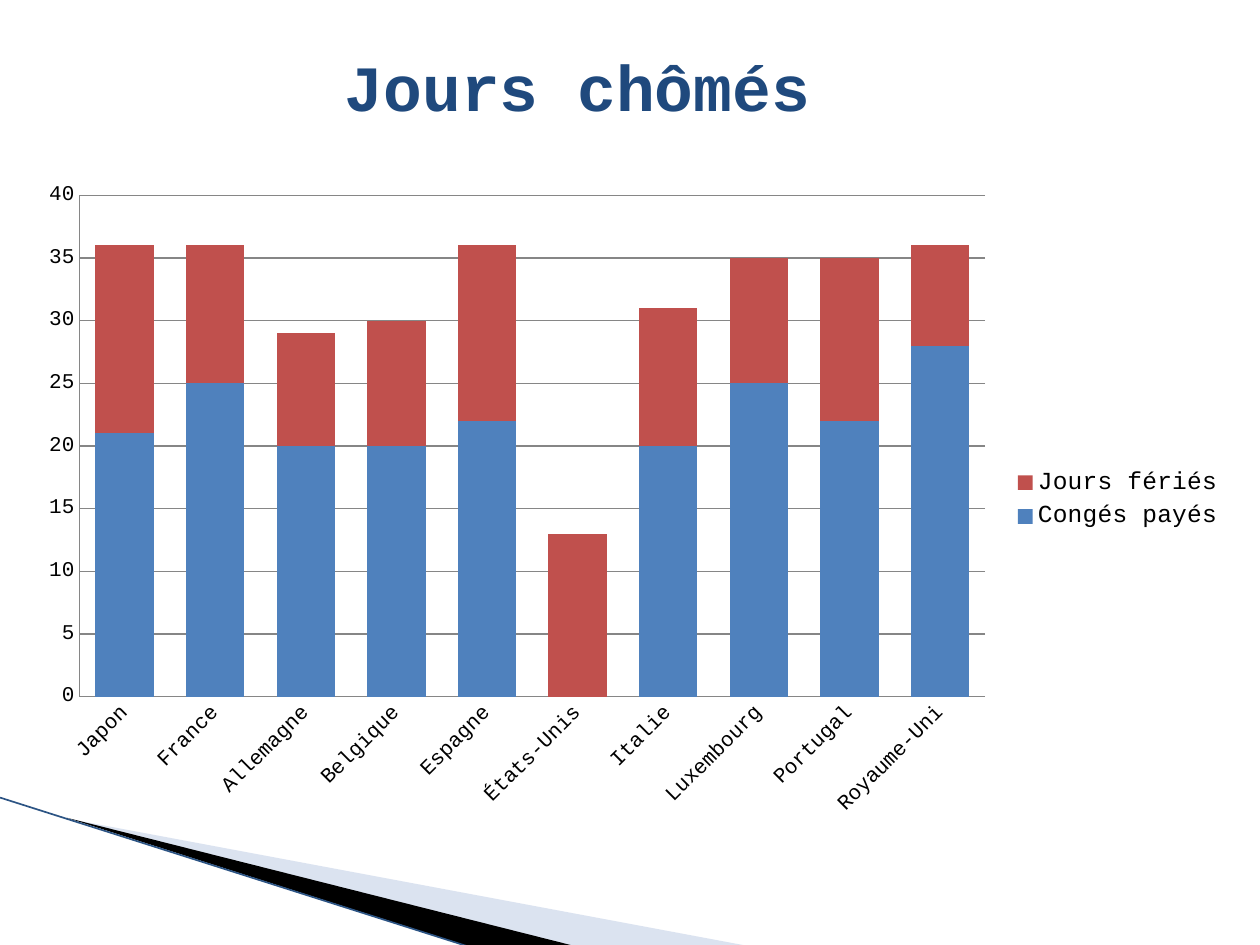
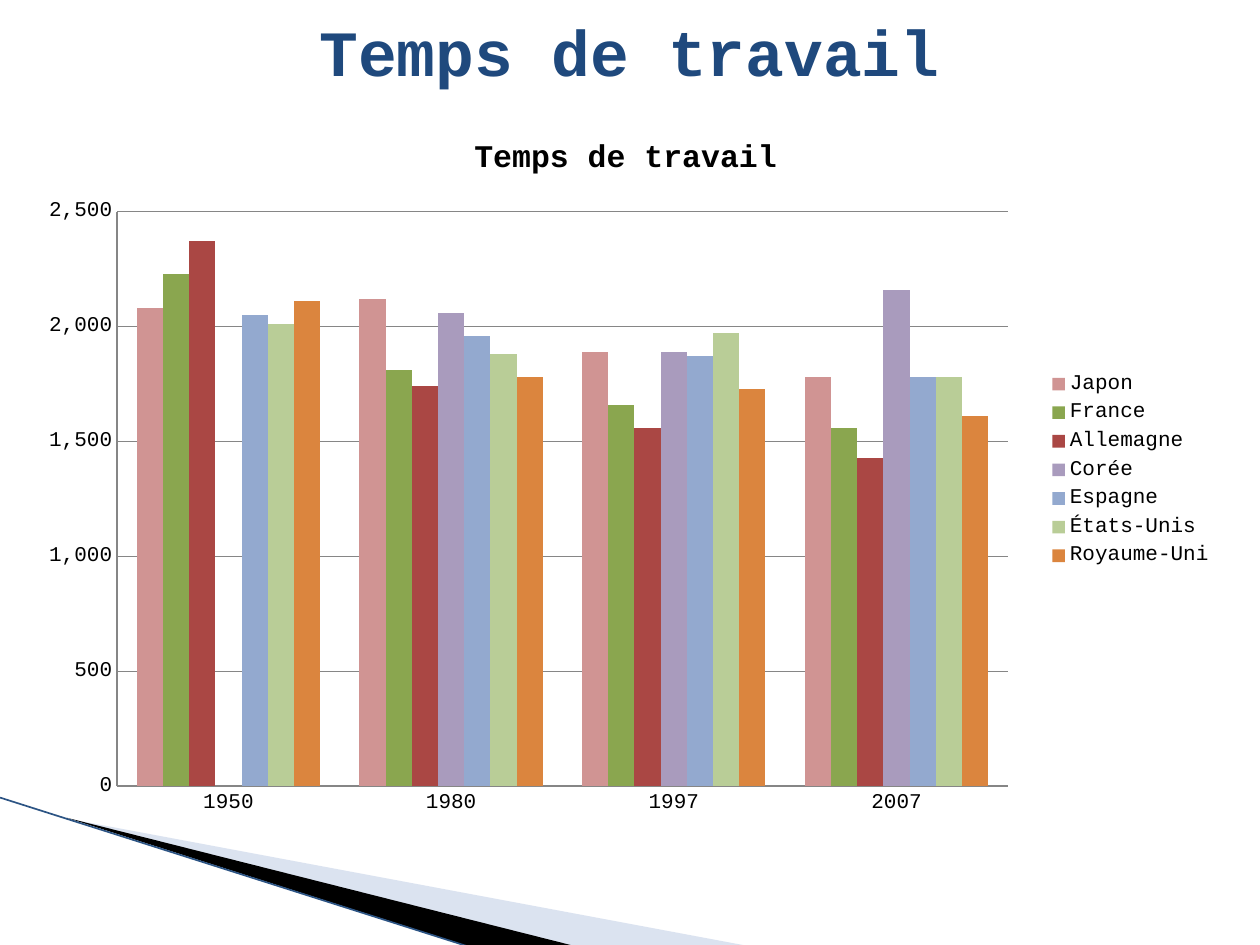
from dataclasses import dataclass

from lxml import etree
from pptx import Presentation
from pptx.chart.data import CategoryChartData
from pptx.dml.color import RGBColor
from pptx.enum.chart import XL_CHART_TYPE, XL_LEGEND_POSITION, XL_TICK_MARK
from pptx.enum.shapes import MSO_CONNECTOR
from pptx.enum.text import MSO_ANCHOR, MSO_AUTO_SIZE, PP_ALIGN
from pptx.oxml.ns import qn
from pptx.util import Inches, Pt

STACKED = XL_CHART_TYPE.COLUMN_STACKED
CLUSTERED = XL_CHART_TYPE.COLUMN_CLUSTERED
RIGHT = XL_LEGEND_POSITION.RIGHT
NO_TICK = XL_TICK_MARK.NONE
TITLE_ONLY = 5


@dataclass(frozen=True)
class Theme:
    font: str = "Courier New"
    title: str = "1F497D"
    text: str = "000000"
    grid: str = "868686"
    fan_light: str = "A7B9DB"
    fan_dark: str = "000000"
    fan_edge: str = "2C5484"
    title_size: float = 36.9
    chart_title_size: int = 18
    axis_size: int = 12


THEME = Theme()
FAN_BOX = (0, 6.33)

DAYS_OFF_COUNTRIES = ["Japon", "France", "Allemagne", "Belgique", "Espagne",
                      "États-Unis", "Italie", "Luxembourg", "Portugal", "Royaume-Uni"]
DAYS_OFF = [
    ("Congés payés", [21, 25, 20, 20, 22, 0, 20, 25, 22, 28], "4F81BD"),
    ("Jours fériés", [15, 11, 9, 10, 14, 13, 11, 10, 13, 8], "C0504D"),
]
WORK_YEARS = ["1950", "1980", "1997", "2007"]
WORK_HOURS = [
    ("Japon", [2080, 2120, 1890, 1780], "D09493"),
    ("France", [2230, 1810, 1660, 1560], "8AA64F"),
    ("Allemagne", [2370, 1740, 1560, 1430], "AA4744"),
    ("Corée", [None, 2060, 1890, 2160], "A99BBD"),
    ("Espagne", [2050, 1960, 1870, 1780], "93A9CF"),
    ("États-Unis", [2010, 1880, 1970, 1780], "B9CD97"),
    ("Royaume-Uni", [2110, 1780, 1730, 1610], "DB853E"),
]


def rgb(value):
    return RGBColor.from_string(value)


def style_font(font, size, color=THEME.text, bold=False):
    font.name = THEME.font
    font.size = Pt(size)
    font.bold = bold
    font.color.rgb = rgb(color)


def add_blade(slide, box, points, color, alpha=None):
    """Add a borderless polygon whose points are inches from the box corner."""
    left, top = box
    corners = [(Inches(left + x), Inches(top + y)) for x, y in points]
    builder = slide.shapes.build_freeform(*corners[0])
    builder.add_line_segments(corners[1:])
    sp = builder.convert_to_shape()
    sp.shadow.inherit = False
    sp.fill.solid()
    sp.fill.fore_color.rgb = rgb(color)
    sp.line.fill.background()
    if alpha is not None:
        clr = sp.fill._xPr.find(".//" + qn("a:srgbClr"))
        etree.SubElement(clr, qn("a:alpha")).set("val", str(alpha * 1000))


def add_corner_fan(slide, box):
    add_blade(slide, box, [(0.55, 0.17), (5.95, 1.18), (4.56, 1.18)], THEME.fan_light, 40)
    add_blade(slide, box, [(0.53, 0.16), (4.57, 1.18), (3.72, 1.18)], THEME.fan_dark)
    left, top = box
    edge = slide.shapes.add_connector(MSO_CONNECTOR.STRAIGHT, Inches(left), Inches(top),
                                      Inches(left + 3.71), Inches(top + 1.18))
    edge.line.color.rgb = rgb(THEME.fan_edge)
    edge.line.width = Pt(0.95)
    etree.SubElement(edge._element.spPr, qn("a:effectLst"))


def set_title(slide, text, box):
    title = slide.shapes.title
    title.left, title.top, title.width, title.height = map(Inches, box)
    tf = title.text_frame
    tf.text = text
    tf.auto_size = MSO_AUTO_SIZE.NONE
    tf.vertical_anchor = MSO_ANCHOR.MIDDLE
    p = tf.paragraphs[0]
    p.alignment = PP_ALIGN.CENTER
    style_font(p.runs[0].font, THEME.title_size, THEME.title, True)


def place_plot(chart, box, plot_box):
    """Fix the inner plot area; plot_box is in inches from the chart corner."""
    area = chart.element.find(".//" + qn("c:plotArea"))
    for old in area.findall(qn("c:layout")):
        area.remove(old)
    layout = etree.Element(qn("c:layout"))
    manual = etree.SubElement(layout, qn("c:manualLayout"))
    x, y, w, h = plot_box
    width, height = box[2:]
    values = {"layoutTarget": "inner", "xMode": "edge", "yMode": "edge",
              "x": x / width, "y": y / height, "w": w / width, "h": h / height}
    for tag, value in values.items():
        etree.SubElement(manual, qn("c:" + tag)).set("val", str(value))
    area.insert(0, layout)


def style_axes(chart, top_value, step, number_format):
    for axis in (chart.category_axis, chart.value_axis):
        axis.major_tick_mark = axis.minor_tick_mark = NO_TICK
        axis.format.line.color.rgb = rgb(THEME.grid)
        style_font(axis.tick_labels.font, THEME.axis_size)
    axis = chart.value_axis
    axis.minimum_scale, axis.maximum_scale, axis.major_unit = 0, top_value, step
    axis.has_major_gridlines = True
    axis.major_gridlines.format.line.color.rgb = rgb(THEME.grid)
    axis.tick_labels.number_format = number_format
    axis.tick_labels.number_format_is_linked = False


def add_column_chart(slide, kind, box, plot_box, categories, series, top_value, step,
                     gap, overlap=0, legend_size=12, number_format="General"):
    data = CategoryChartData()
    data.categories = categories
    for name, values, _ in series:
        data.add_series(name, values)
    chart = slide.shapes.add_chart(kind, *map(Inches, box), data).chart
    style_font(chart.font, 10)
    chart.has_title = False
    chart.has_legend = True
    chart.legend.position = RIGHT
    chart.legend.include_in_layout = False
    style_font(chart.legend.font, legend_size)

    plot = chart.plots[0]
    plot.vary_by_categories = False
    plot.gap_width, plot.overlap = gap, overlap
    for column, (_, _, color) in zip(plot.series, series):
        column.invert_if_negative = False
        column.format.fill.solid()
        column.format.fill.fore_color.rgb = rgb(color)
    style_axes(chart, top_value, step, number_format)
    place_plot(chart, box, plot_box)
    return chart


def new_slide(prs, title, title_box):
    slide = prs.slides.add_slide(prs.slide_layouts[TITLE_ONLY])
    add_corner_fan(slide, FAN_BOX)
    set_title(slide, title, title_box)
    return slide


def build_days_off(prs):
    slide = new_slide(prs, "Jours chômés", (0.5, 0.36, 8.17, 0.64))
    chart = add_column_chart(slide, STACKED, (0.2, 1.35, 9.61, 5.23), (0.43, 0.2, 7.19, 3.98),
                             DAYS_OFF_COUNTRIES, DAYS_OFF, 40, 5,
                             gap=55, overlap=100, legend_size=14)
    labels = chart.element.xpath(".//c:catAx/c:txPr/a:bodyPr")[0]
    labels.set("rot", str(-45 * 60000))


def build_work_time(prs):
    heading = "Temps de travail"
    slide = new_slide(prs, heading, (0.5, 0.13, 9, 0.54))
    chart = add_column_chart(slide, CLUSTERED, (0.2, 0.88, 9.53, 5.7), (0.73, 0.8, 7.07, 4.56),
                             WORK_YEARS, WORK_HOURS, 2500, 500,
                             gap=150, number_format="#,##0")
    chart.has_title = True
    tf = chart.chart_title.text_frame
    tf.text = heading
    style_font(tf.paragraphs[0].runs[0].font, THEME.chart_title_size, bold=True)
    chart.chart_title.include_in_layout = False


def main():
    prs = Presentation()
    prs.slide_width, prs.slide_height = Inches(10), Inches(7.5)
    build_days_off(prs)
    build_work_time(prs)
    prs.save("out.pptx")


if __name__ == "__main__":
    main()
